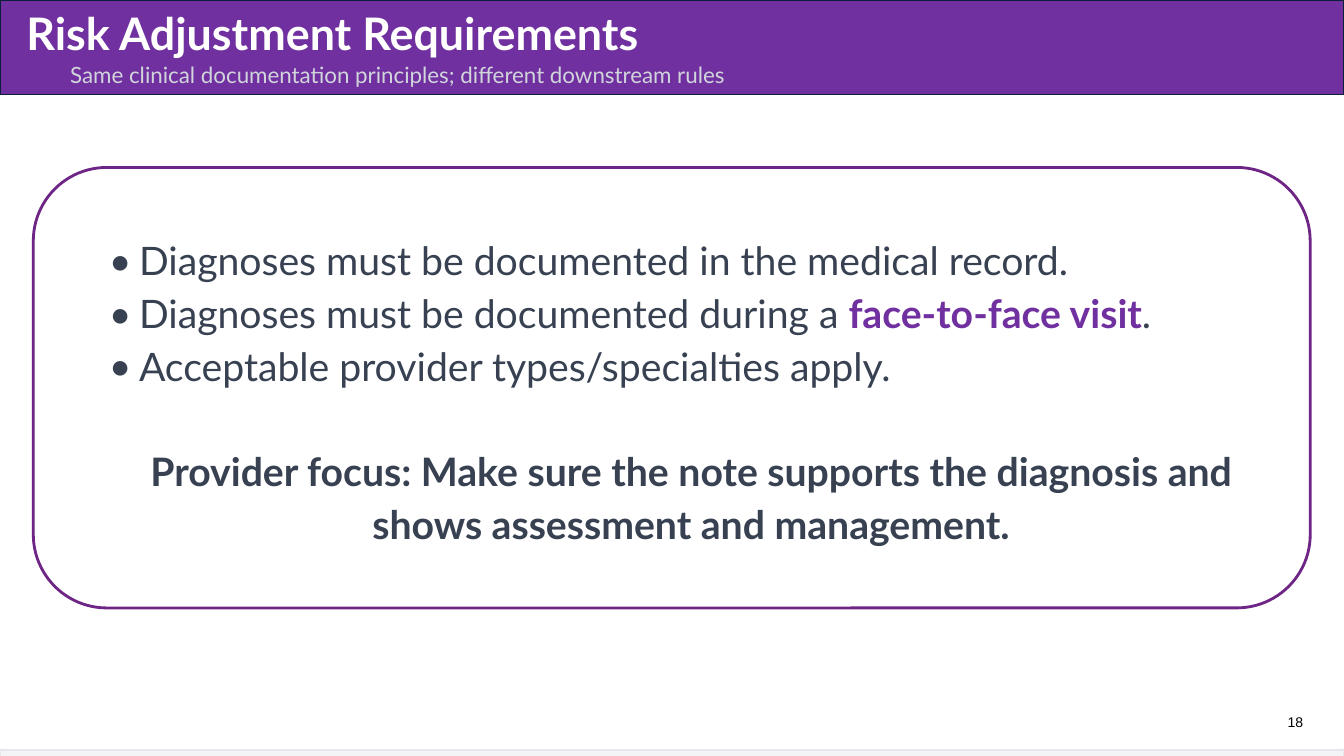
"""Build the risk adjustment requirements slide."""
from lxml.etree import SubElement
from pptx import Presentation
from pptx.dml.color import RGBColor
from pptx.enum.shapes import MSO_SHAPE
from pptx.enum.text import MSO_ANCHOR, MSO_AUTO_SIZE, PP_ALIGN
from pptx.oxml.ns import qn
from pptx.util import Cm, Pt

THEME = {
    "font": "Lato", "number_font": "Arial",
    "purple": "7030A0", "navy": "0B1F3A", "violet": "6E2585",
    "white": "FFFFFF", "silver": "D1D5DB", "slate": "374151",
    "pale": "F3F4F6", "border": "E5E7EB", "black": "000000",
    "title": 32, "subtitle": 16, "body": 28, "number": 10,
}
SLIDE_SIZE = (33.87, 19.05)
TITLE = "Risk Adjustment Requirements"
SUBTITLE = "Same clinical documentation principles; different downstream rules"
REQUIREMENTS = [
    [("Diagnoses must be documented in the medical record.", "slate", False)],
    [("Diagnoses must be documented during a ", "slate", False),
     ("face‑to‑face visit", "purple", True),
     (".", "slate", False)],
    [("Acceptable provider types/specialties apply.", "slate", False)],
]
FOCUS = [("Provider focus: Make sure the note supports the diagnosis and "
          "shows assessment and management.", "slate", True)]
NUMBER = "18"
PANELS = [
    (MSO_SHAPE.RECTANGLE, (0, 0, 33.87, 2.39), "purple", "navy", 1),
    (MSO_SHAPE.ROUNDED_RECTANGLE, (0.84, 4.22, 32.18, 11.1), "white", "violet", 2),
    (MSO_SHAPE.RECTANGLE, (0, 18.9, 33.87, 0.33), "pale", "border", 1),
]
TITLE_BOX = (0.41, 0.41, 30.81, 0.81)
SUBTITLE_BOX = (1.52, 1.47, 30.81, 0.81)
BODY_BOX = (2.49, 3.1, 29.85, 13.41)
NUMBER_BOX = (31.85, 17.68, 0.99, 1.02)
BULLET_INDENT = 0.76
LINE_SPACING = 1.12
FOCUS_GAP = 37.5


def apply(target, values):
    for name, value in values.items():
        setattr(target, name, value)


def color(name):
    return RGBColor.from_string(THEME[name])


def add_panel(slide, kind, box, fill, line, width):
    shape = slide.shapes.add_shape(kind, *map(Cm, box))
    shape.shadow.inherit = False
    shape.fill.solid()
    shape.fill.fore_color.rgb = color(fill)
    shape.line.color.rgb = color(line)
    shape.line.width = Pt(width)


def prepare(shape, box):
    apply(shape, dict(zip(("left", "top", "width", "height"), map(Cm, box))))
    apply(shape.text_frame, {
        "word_wrap": True, "auto_size": MSO_AUTO_SIZE.NONE,
        "vertical_anchor": MSO_ANCHOR.MIDDLE})
    return shape.text_frame


def write(paragraph, runs, size, font="font", **layout):
    apply(paragraph, {"alignment": PP_ALIGN.LEFT, "space_before": Pt(0), **layout})
    for text, tint, bold in runs:
        run = paragraph.add_run()
        run.text = text
        apply(run.font, {"name": THEME[font], "size": Pt(THEME[size]), "bold": bold})
        run.font.color.rgb = color(tint)


def set_bullet(paragraph, bulleted):
    properties = paragraph._p.get_or_add_pPr()
    indent = Cm(BULLET_INDENT) if bulleted else 0
    properties.set("marL", str(indent))
    properties.set("indent", str(-indent))
    if bulleted:
        SubElement(properties, qn("a:buFont"), typeface=THEME["font"])
        SubElement(properties, qn("a:buChar"), char="•")
    else:
        SubElement(properties, qn("a:buNone"))


def fill_body(frame):
    rows = [(runs, True) for runs in REQUIREMENTS] + [(FOCUS, False)]
    for index, (runs, bulleted) in enumerate(rows):
        paragraph = frame.add_paragraph() if index else frame.paragraphs[0]
        layout = {"line_spacing": LINE_SPACING}
        if not bulleted:
            layout.update(alignment=PP_ALIGN.CENTER, space_before=Pt(FOCUS_GAP))
        set_bullet(paragraph, bulleted)
        write(paragraph, runs, "body", **layout)


def main():
    presentation = Presentation()
    presentation.slide_width, presentation.slide_height = map(Cm, SLIDE_SIZE)
    slide = presentation.slides.add_slide(presentation.slide_layouts[1])
    title, body = slide.placeholders
    for panel in PANELS:
        add_panel(slide, *panel)
    for placeholder in (title, body):
        slide.shapes._spTree.append(placeholder._element)

    frame = prepare(title, TITLE_BOX)
    write(frame.paragraphs[0], [(TITLE, "white", True)], "title")
    fill_body(prepare(body, BODY_BOX))

    subtitle = slide.shapes.add_textbox(*map(Cm, SUBTITLE_BOX))
    frame = prepare(subtitle, SUBTITLE_BOX)
    write(frame.paragraphs[0], [(SUBTITLE, "silver", False)], "subtitle")

    number = slide.shapes.add_textbox(*map(Cm, NUMBER_BOX))
    frame = prepare(number, NUMBER_BOX)
    frame.margin_right = 0
    write(frame.paragraphs[0], [(NUMBER, "black", False)], "number",
          "number_font", alignment=PP_ALIGN.RIGHT)
    presentation.save("out.pptx")


if __name__ == "__main__":
    main()
